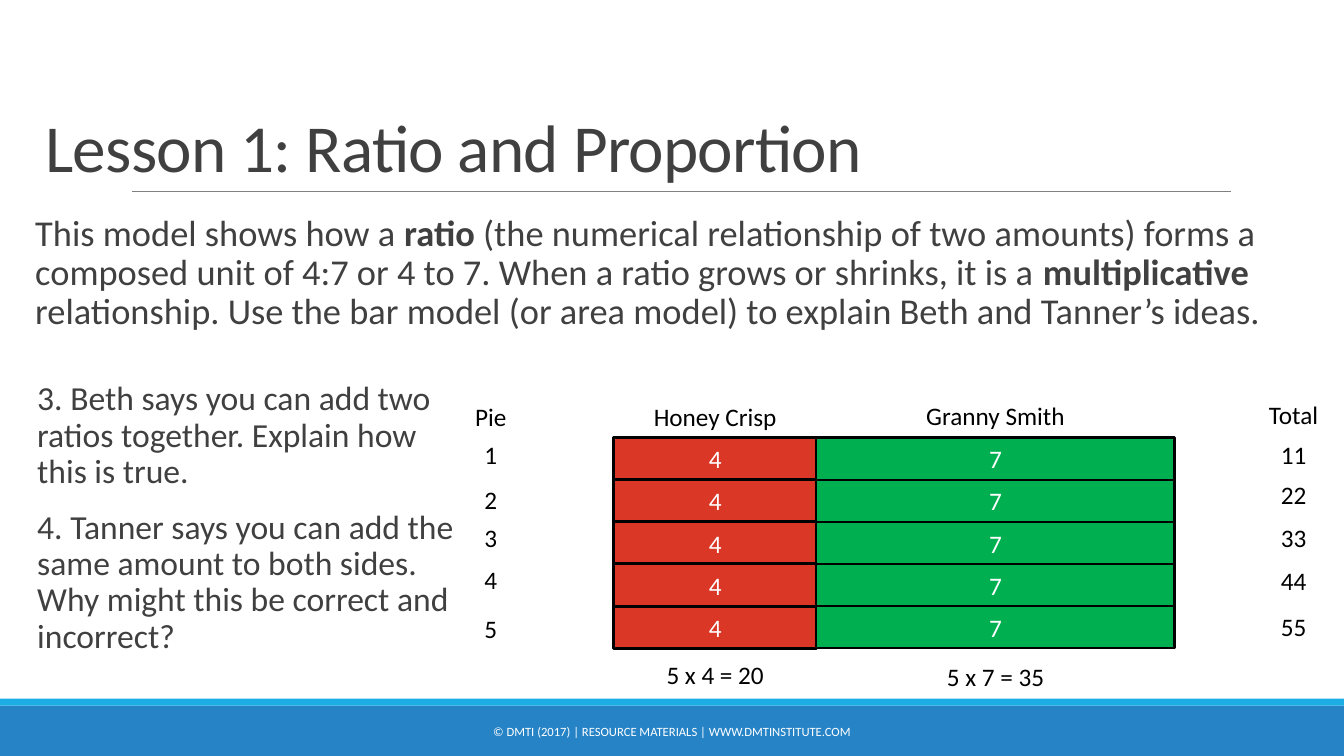
from dataclasses import dataclass

from pptx import Presentation
from pptx.dml.color import RGBColor
from pptx.enum.shapes import MSO_CONNECTOR, MSO_SHAPE
from pptx.enum.text import MSO_ANCHOR, MSO_AUTO_SIZE, PP_ALIGN
from pptx.oxml.ns import qn
from pptx.shapes.autoshape import Shape
from pptx.slide import Slide
from pptx.text.text import TextFrame
from pptx.util import Pt


@dataclass(frozen=True)
class Theme:
    font: str = "Calibri"
    dark_text: RGBColor = RGBColor(0x40, 0x40, 0x40)
    black: RGBColor = RGBColor(0, 0, 0)
    white: RGBColor = RGBColor(0xFF, 0xFF, 0xFF)
    rule: RGBColor = RGBColor(0x80, 0x80, 0x80)
    footer_blue: RGBColor = RGBColor(0x26, 0x83, 0xC6)
    accent_blue: RGBColor = RGBColor(0x1C, 0xAD, 0xE4)
    red: RGBColor = RGBColor(0xDA, 0x37, 0x26)
    green: RGBColor = RGBColor(0x00, 0xB0, 0x50)
    title_size: float = 48
    intro_size: float = 26
    question_size: float = 24
    label_size: float = 18
    footer_size: float = 9


@dataclass(frozen=True)
class Box:
    left: float
    top: float
    width: float
    height: float

    def lengths(self) -> tuple[Pt, Pt, Pt, Pt]:
        return Pt(self.left), Pt(self.top), Pt(self.width), Pt(self.height)


@dataclass(frozen=True)
class BarColumn:
    left: float
    width: float
    value: str
    fill: RGBColor
    line_width: float


@dataclass(frozen=True)
class LabelColumn:
    left: float
    width: float
    tops: tuple[float, ...]
    labels: tuple[str, ...]


@dataclass(frozen=True)
class Style:
    size: float
    color: RGBColor
    align: PP_ALIGN = PP_ALIGN.LEFT
    line_spacing: float = 1.0
    gap: float = 0


THEME = Theme()
SLIDE_WIDTH, SLIDE_HEIGHT = 960, 540
BAR_TOP, BAR_STEP, BAR_HEIGHT, BAR_COUNT = 312.5, 30.1, 30.2, 5
LABEL_HEIGHT = 29

TITLE = Style(THEME.title_size, THEME.dark_text, line_spacing=0.85)
INTRO = Style(THEME.intro_size, THEME.dark_text, line_spacing=0.9)
QUESTION = Style(THEME.question_size, THEME.dark_text, line_spacing=0.9, gap=14)
LABEL = Style(THEME.label_size, THEME.black, PP_ALIGN.CENTER)
BAR_VALUE = Style(THEME.label_size, THEME.white, PP_ALIGN.CENTER)
FOOTER = Style(THEME.footer_size, THEME.white, PP_ALIGN.CENTER)

BAR_COLUMNS = (
    BarColumn(438.5, 144.7, "4", THEME.red, 2.25),
    BarColumn(583.2, 255.8, "7", THEME.green, 1.5),
)
LABEL_COLUMNS = (
    LabelColumn(287.5, 126, (283, 310.3, 342.7, 369.4, 399.6, 434.2),
                ("Pie", "1", "2", "3", "4", "5")),
    LabelColumn(438.5, 144.7, (283, 467.3), ("Honey Crisp", "5 x 4 = 20")),
    LabelColumn(583.2, 255.8, (282.2, 468.7), ("Granny Smith", "5 x 7 = 35")),
    LabelColumn(890, 68, (281.5, 310.3, 339.1, 369.4, 400.3, 433.4),
                ("Total", "11", "22", "33", "44", "55")),
)
# Every second piece is bold.
INTRO_PIECES = (
    "This model shows how a ",
    "ratio",
    " (the numerical relationship of two amounts) forms a composed unit of 4:7 or 4 to 7."
    " When a ratio grows or shrinks, it is a ",
    "multiplicative",
    " relationship. Use the bar model (or area model) to explain Beth and Tanner’s ideas.",
)
QUESTIONS = (
    "3. Beth says you can add two ratios together. Explain how this is true.",
    "4. Tanner says you can add the same amount to both sides. "
    "Why might this be correct and incorrect?",
)


def write(frame: TextFrame, paragraphs: tuple[tuple[str, ...], ...], style: Style) -> None:
    """Fill the frame; each paragraph alternates plain and bold pieces."""
    frame.word_wrap = True
    for index, pieces in enumerate(paragraphs):
        paragraph = frame.add_paragraph() if index else frame.paragraphs[0]
        paragraph.alignment = style.align
        paragraph.line_spacing = style.line_spacing
        if index:
            paragraph.space_before = Pt(style.gap)
        paragraph.font.name = THEME.font
        paragraph.font.size = Pt(style.size)
        paragraph.font.color.rgb = style.color
        for position, piece in enumerate(pieces):
            run = paragraph.add_run()
            run.text = piece
            if position % 2:
                run.font.bold = True


def add_text(slide: Slide, box: Box, paragraphs: tuple[tuple[str, ...], ...], style: Style,
             side_inset: float = 7.2, anchor: MSO_ANCHOR = MSO_ANCHOR.TOP) -> None:
    frame = slide.shapes.add_textbox(*box.lengths()).text_frame
    frame.margin_left = frame.margin_right = Pt(side_inset)
    frame.vertical_anchor = anchor
    write(frame, paragraphs, style)


def add_rectangle(slide: Slide, box: Box, fill: RGBColor) -> Shape:
    shape = slide.shapes.add_shape(MSO_SHAPE.RECTANGLE, *box.lengths())
    shape.shadow.inherit = False
    shape.fill.solid()
    shape.fill.fore_color.rgb = fill
    shape.line.fill.background()
    return shape


def add_frame(slide: Slide) -> None:
    """Draw the footer bands and the rule under the title."""
    add_rectangle(slide, Box(0, 504, SLIDE_WIDTH, 36), THEME.footer_blue)
    add_rectangle(slide, Box(0, 499, SLIDE_WIDTH, 5), THEME.accent_blue)
    rule = slide.shapes.add_connector(
        MSO_CONNECTOR.STRAIGHT, Pt(94.3), Pt(136.8), Pt(879.1), Pt(136.8))
    rule.line.color.rgb = THEME.rule
    rule.line.width = Pt(0.5)
    properties = rule._element.spPr
    properties.append(properties.makeelement(qn("a:effectLst"), {}))
    add_text(slide, Box(290.2, 508.3, 379.4, 28.8),
             (("© DMTI (2017) | RESOURCE MATERIALS | WWW.DMTINSTITUTE.COM",),),
             FOOTER, anchor=MSO_ANCHOR.MIDDLE)


def add_title(slide: Slide) -> None:
    title = slide.shapes.title
    title.left, title.top, title.width, title.height = Box(25.2, 22.3, 853.2, 114.5).lengths()
    frame = title.text_frame
    frame.auto_size = MSO_AUTO_SIZE.NONE
    frame.vertical_anchor = MSO_ANCHOR.BOTTOM
    write(frame, (("Lesson 1: Ratio and Proportion",),), TITLE)
    frame.paragraphs[0].runs[0]._r.get_or_add_rPr().set("spc", "-50")


def add_bar_model(slide: Slide) -> None:
    for row in range(BAR_COUNT):
        for column in BAR_COLUMNS:
            box = Box(column.left, BAR_TOP + row * BAR_STEP, column.width, BAR_HEIGHT)
            bar = add_rectangle(slide, box, column.fill)
            bar.line.color.rgb = THEME.black
            bar.line.width = Pt(column.line_width)
            bar.text_frame.vertical_anchor = MSO_ANCHOR.MIDDLE
            write(bar.text_frame, ((column.value,),), BAR_VALUE)
    for column in LABEL_COLUMNS:
        for top, label in zip(column.tops, column.labels):
            add_text(slide, Box(column.left, top, column.width, LABEL_HEIGHT),
                     ((label,),), LABEL)


def main() -> None:
    presentation = Presentation()
    presentation.slide_width, presentation.slide_height = Pt(SLIDE_WIDTH), Pt(SLIDE_HEIGHT)
    slide = presentation.slides.add_slide(presentation.slide_layouts[5])
    add_frame(slide)
    add_title(slide)
    add_text(slide, Box(25.2, 149.8, 902.2, 105.8), (INTRO_PIECES,), INTRO, side_inset=0)
    add_bar_model(slide)
    add_text(slide, Box(26.6, 269.3, 297.4, 199.4),
             tuple((question,) for question in QUESTIONS), QUESTION, side_inset=0)
    presentation.save("out.pptx")


if __name__ == "__main__":
    main()
